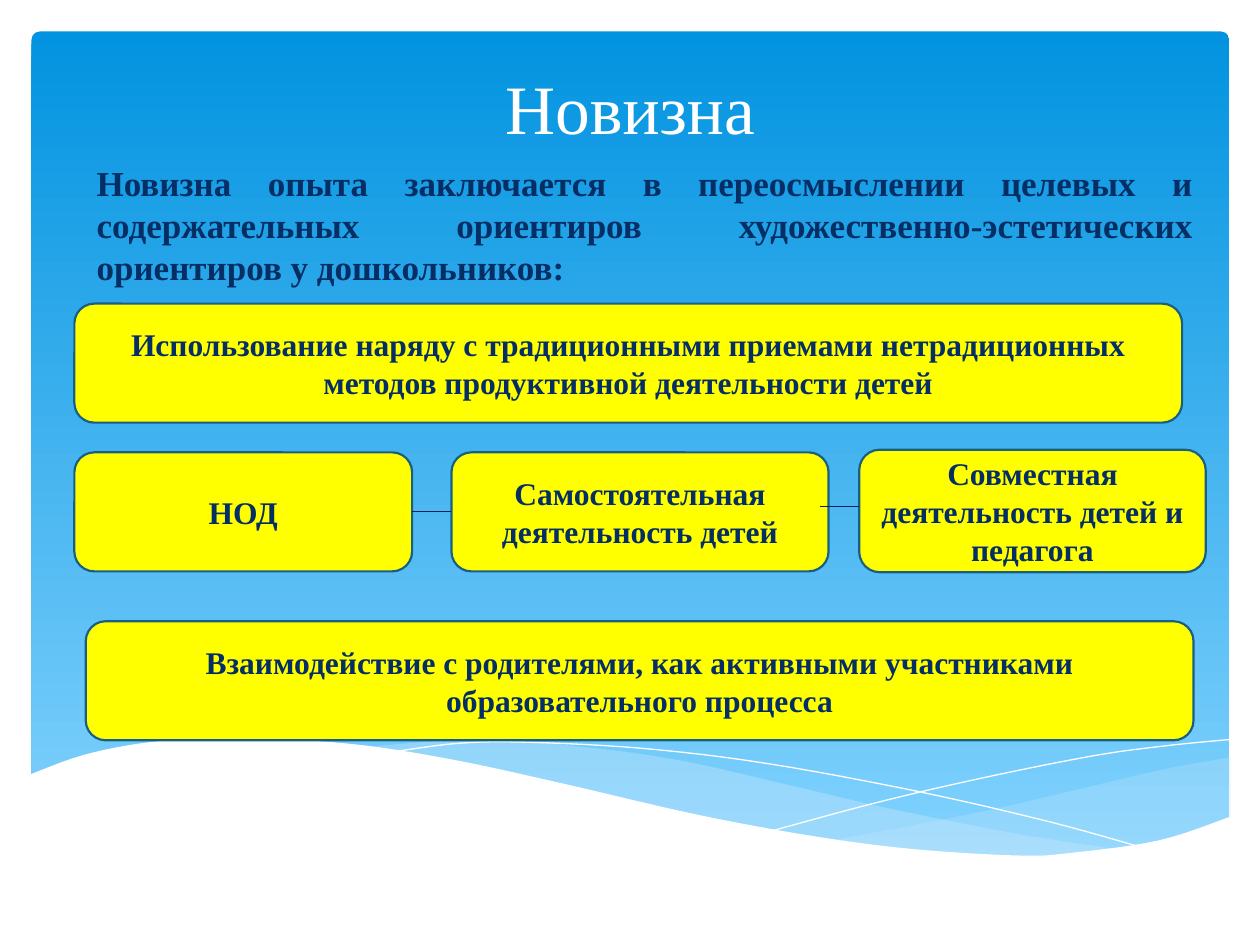
"""Build the slide about the novelty of the teaching experience."""
from lxml import etree
from pptx import Presentation
from pptx.dml import color
from pptx.enum import shapes, text
from pptx.oxml import ns
from pptx.util import Pt

FONT = "Times New Roman"
NAVY = "052E65"
WHITE = "FFFFFF"
PALE = "C6E7FC"
CENTER = text.PP_ALIGN.CENTER
MIDDLE = text.MSO_ANCHOR.MIDDLE

RIGHT_WAVE = [
    [(703.4, 432.7), (663.8, 439.9), (620.6, 450), (561.6, 463.7), (476.6, 480.2)],
    [(476.6, 480.2), (517.7, 485.3), (563, 488.9), (608.4, 488.9), (646.6, 483.8),
     (679.7, 475.9), (703.4, 467.3)],
]
MIDDLE_WAVE = [
    [(643.7, 486), (581.8, 476.6), (509, 462.2), (453.6, 449.3), (390.2, 434.9),
     (334.8, 427), (273.6, 422.6), (206.6, 427)],
    [(206.6, 427), (261.4, 434.9), (324, 449.3), (408.2, 468), (479.5, 481),
     (539.3, 488.2), (589.7, 489.6), (643.7, 486)],
]
FRONT_WAVE = [
    [(703.4, 466.6), (662.4, 480.2), (612, 487.4), (582.5, 488.9), (522.7, 485.3),
     (466.6, 478.1), (399.6, 465.8), (321.8, 447.8), (262.8, 434.9), (210.2, 426.2),
     (165.6, 422.6), (127.4, 421.9), (85.7, 424.1), (48.2, 431.3), (16.6, 442.8)],
    [(16.6, 526.3), (703.4, 526.3)],
]
FALLING_LINE = [(223.2, 429.8), (261.4, 424.8), (300.2, 424.1), (367.9, 427.7),
                (438.5, 436.3), (524.2, 452.2), (599, 469.4), (653.8, 484.6)]
RISING_LINE = [(442.1, 474.5), (501.1, 458.6), (559.4, 445), (624.2, 432),
               (666, 426.2), (702.7, 422.6)]

BOXES = [
    ("НОД", 42.5, 258.5, 193, 68),
    ("Самостоятельная деятельность детей", 258, 258.5, 215.5, 68),
    ("Совместная деятельность детей и педагога", 491, 257, 198, 70),
    ("Взаимодействие с родителями, как активными участниками "
     "образовательного процесса", 49, 355, 633, 68),
    ("Использование наряду с традиционными приемами нетрадиционных "
     "методов продуктивной деятельности детей", 42.5, 173.5, 633, 68),
]
LINKS = [(235.5, 292.5, 258), (468.5, 289.5, 491)]


def rgb(value):
    """Return the colour for a hex string."""
    return color.RGBColor.from_string(value)


def write_text(shape, content, size=18, ink=NAVY, bold=True, align=CENTER, anchor=MIDDLE):
    """Write one formatted paragraph into a shape."""
    frame = shape.text_frame
    frame.word_wrap = True
    frame.auto_size = text.MSO_AUTO_SIZE.NONE
    frame.vertical_anchor = anchor
    frame.text = content
    paragraph = frame.paragraphs[0]
    paragraph.alignment = align
    paragraph.space_before = Pt(0)
    font = paragraph.runs[0].font
    font.name, font.size, font.bold = FONT, Pt(size), bold
    font.color.rgb = rgb(ink)


def place_text(slide, index, frame, content, **style):
    """Move a placeholder above the background and fill it."""
    placeholder = slide.placeholders[index]
    slide.shapes._spTree.append(placeholder._element)
    placeholder.left, placeholder.top, placeholder.width, placeholder.height = map(Pt, frame)
    write_text(placeholder, content, **style)


def smooth(points, steps=6):
    """Return a Catmull-Rom curve through the points."""
    padded = [points[0], *points, points[-1]]
    curve = [points[0]]
    for a, b, c, d in zip(padded, padded[1:], padded[2:], padded[3:]):
        for step in range(1, steps + 1):
            t = step / steps
            curve.append(tuple(
                (2 * q + (r - p) * t + (2 * p - 5 * q + 4 * r - s) * t ** 2
                 + (3 * q - p - 3 * r + s) * t ** 3) / 2
                for p, q, r, s in zip(a, b, c, d)))
    return curve


def add_outline(slide, points, close):
    """Add a freeform through the points."""
    start, *rest = [(Pt(x), Pt(y)) for x, y in points]
    builder = slide.shapes.build_freeform(*start)
    builder.add_line_segments(rest, close=close)
    shape = builder.convert_to_shape()
    shape.shadow.inherit = False
    return shape


def add_wave(slide, edges, fill, opacity=100):
    """Add a filled wave bounded by smooth edges."""
    shape = add_outline(slide, [point for edge in edges for point in smooth(edge)], True)
    shape.line.fill.background()
    shape.fill.solid()
    shape.fill.fore_color.rgb = rgb(fill)
    if opacity < 100:
        tint = shape._element.spPr.find(".//" + ns.qn("a:srgbClr"))
        etree.SubElement(tint, ns.qn("a:alpha"), val=str(opacity * 1000))


def add_curve(slide, points):
    """Add a white hairline curve."""
    shape = add_outline(slide, smooth(points), False)
    shape.fill.background()
    shape.line.color.rgb = rgb(WHITE)
    shape.line.width = Pt(0)


def add_rounded(slide, left, top, width, height):
    """Add a rounded rectangle without a shadow."""
    shape = slide.shapes.add_shape(
        shapes.MSO_SHAPE.ROUNDED_RECTANGLE, Pt(left), Pt(top), Pt(width), Pt(height))
    shape.shadow.inherit = False
    return shape


def add_sky(slide):
    """Add the blue gradient panel."""
    panel = add_rounded(slide, 18, 18, 684.5, 475)
    panel.adjustments[0] = 0.01
    panel.line.fill.background()
    panel.fill.gradient()
    panel.fill.gradient_angle = 270
    for stop, position, shade in zip(panel.fill.gradient_stops, (0, 1), ("0293E0", "83D3FE")):
        stop.position = position
        stop.color.rgb = rgb(shade)


def add_box(slide, content, *frame):
    """Add a yellow box with centred text."""
    box = add_rounded(slide, *frame)
    box.fill.solid()
    box.fill.fore_color.rgb = rgb("FFFF00")
    box.line.color.rgb = rgb("195F84")
    box.line.width = Pt(1.25)
    write_text(box, content)


def add_link(slide, left, y, right):
    """Add a thin horizontal line between boxes."""
    link = slide.shapes.add_connector(
        shapes.MSO_CONNECTOR.STRAIGHT, Pt(left), Pt(y), Pt(right), Pt(y))
    link.line.color.rgb = rgb("002060")
    link.line.width = Pt(0.75)
    etree.SubElement(link._element.spPr, ns.qn("a:effectLst"))


def main():
    """Build and save the presentation."""
    presentation = Presentation()
    presentation.slide_width, presentation.slide_height = Pt(720), Pt(540)
    slide = presentation.slides.add_slide(presentation.slide_layouts[0])

    add_sky(slide)
    add_wave(slide, RIGHT_WAVE, PALE, opacity=29)
    add_wave(slide, MIDDLE_WAVE, PALE, opacity=40)
    add_curve(slide, FALLING_LINE)
    add_curve(slide, RISING_LINE)
    add_wave(slide, FRONT_WAVE, WHITE)

    place_text(slide, 0, (54, 37.5, 612, 51), "Новизна", size=39.6, ink=WHITE,
               bold=False, anchor=text.MSO_ANCHOR.BOTTOM)
    place_text(slide, 1, (48, 88.5, 641, 369),
               "Новизна опыта заключается в переосмыслении целевых и содержательных "
               "ориентиров художественно-эстетических ориентиров у дошкольников:",
               size=20, align=text.PP_ALIGN.JUSTIFY, anchor=text.MSO_ANCHOR.TOP)

    for box in BOXES:
        add_box(slide, *box)
    for link in LINKS:
        add_link(slide, *link)
    presentation.save("out.pptx")


if __name__ == "__main__":
    main()
